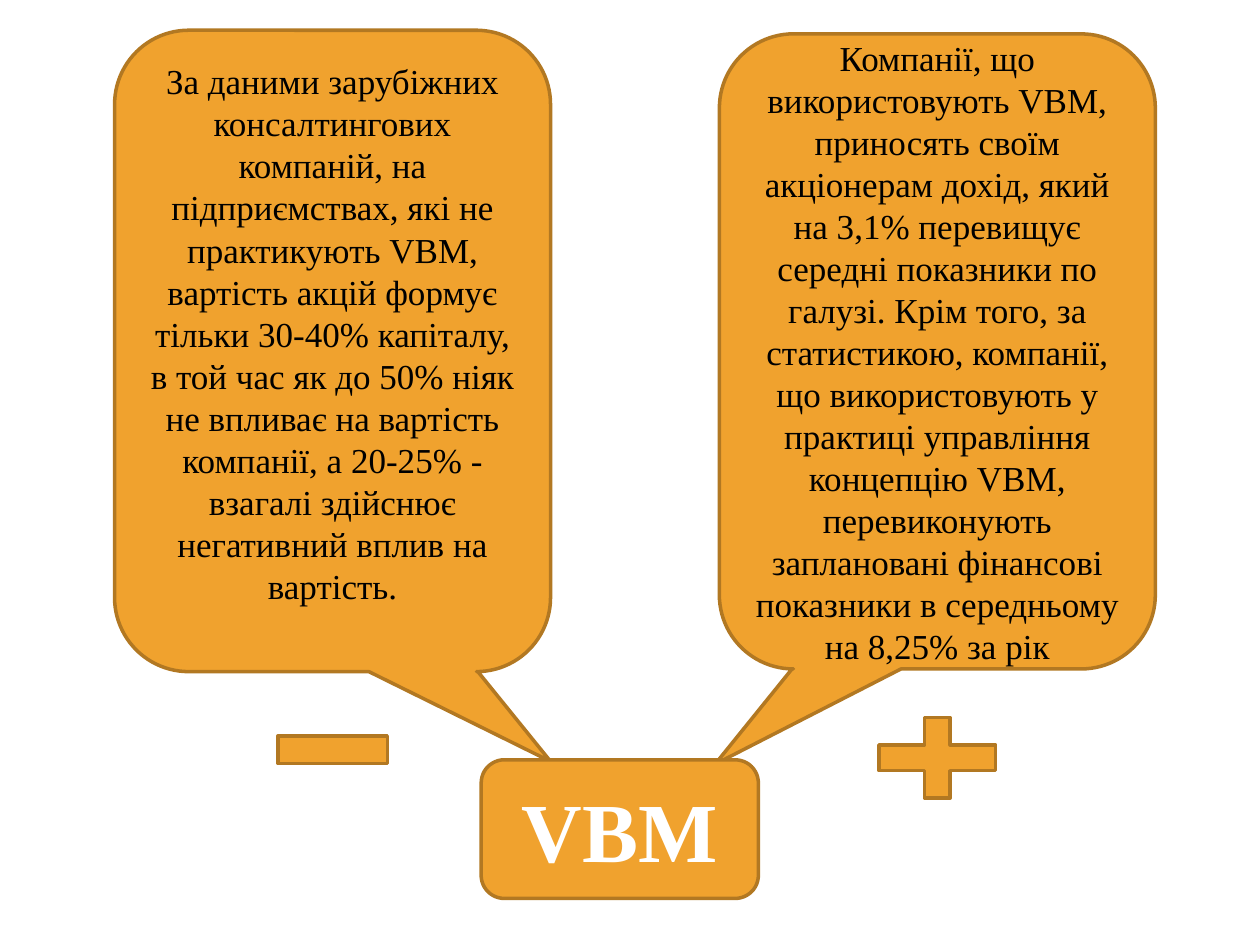
import pptx
import pptx.util
import pptx.dml.color
import pptx.enum.shapes
import pptx.enum.text

Pt = pptx.util.Pt
Preset = pptx.enum.shapes.MSO_SHAPE

COLOURS = {"fill": "F0A22E", "line": "B27822", "dark": "000000", "light": "FFFFFF"}
FONT = "Times New Roman"
WEAKNESS = (
    "За даними зарубіжних консалтингових компаній, на підприємствах, які не "
    "практикують VBM, вартість акцій формує тільки 30-40% капіталу, в той час "
    "як до 50% ніяк не впливає на вартість компанії, а 20-25% - взагалі "
    "здійснює негативний вплив на вартість."
)
STRENGTH = (
    "Компанії, що використовують VBM, приносять своїм акціонерам дохід, який "
    "на 3,1% перевищує середні показники по галузі. Крім того, за статистикою, "
    "компанії, що використовують у практиці управління концепцію VBM, "
    "перевиконують заплановані фінансові показники в середньому на 8,25% за рік"
)


def colour(name):
    return pptx.dml.color.RGBColor.from_string(COLOURS[name])


def add_figure(page, preset, left, top, width, height):
    figure = page.shapes.add_shape(preset, Pt(left), Pt(top), Pt(width), Pt(height))
    figure.shadow.inherit = False
    figure.fill.solid()
    figure.fill.fore_color.rgb = colour("fill")
    figure.line.color.rgb = colour("line")
    figure.line.width = Pt(2)
    return figure


def write_text(figure, text, size, ink, bold=False):
    frame = figure.text_frame
    frame.word_wrap = True
    frame.vertical_anchor = pptx.enum.text.MSO_ANCHOR.MIDDLE
    para = frame.paragraphs[0]
    para.alignment = pptx.enum.text.PP_ALIGN.CENTER
    span = para.add_run()
    span.text = text
    span.font.name = FONT
    span.font.size = Pt(size)
    span.font.bold = bold
    span.font.color.rgb = colour(ink)


def add_callout(page, left, top, height, tail, text):
    callout = add_figure(page, Preset.ROUNDED_RECTANGULAR_CALLOUT, left, top, 249.1, height)
    for index, value in enumerate((*tail, 0.17)):
        callout.adjustments[index] = value
    write_text(callout, text, 20, "dark")
    return callout


def main():
    deck = pptx.Presentation()
    deck.slide_width, deck.slide_height = Pt(720), Pt(540)
    page = deck.slides.add_slide(deck.slide_layouts[6])

    weakness = add_callout(page, 65.5, 17.3, 366.5, (0.5, 0.64), WEAKNESS)
    weakness.text_frame.margin_bottom = Pt(24)
    add_callout(page, 411.1, 19.4, 362.9, (-0.51, 0.65), STRENGTH)

    add_figure(page, Preset.MATH_PLUS, 490.3, 401.8, 90.7, 62.6)
    add_figure(page, Preset.MATH_MINUS, 147.6, 394.6, 85, 67.7)

    subject = add_figure(page, Preset.ROUNDED_RECTANGLE, 275, 434.2, 158.4, 79.2)
    write_text(subject, "VBM", 48, "light", bold=True)

    deck.save("out.pptx")


if __name__ == "__main__":
    main()
